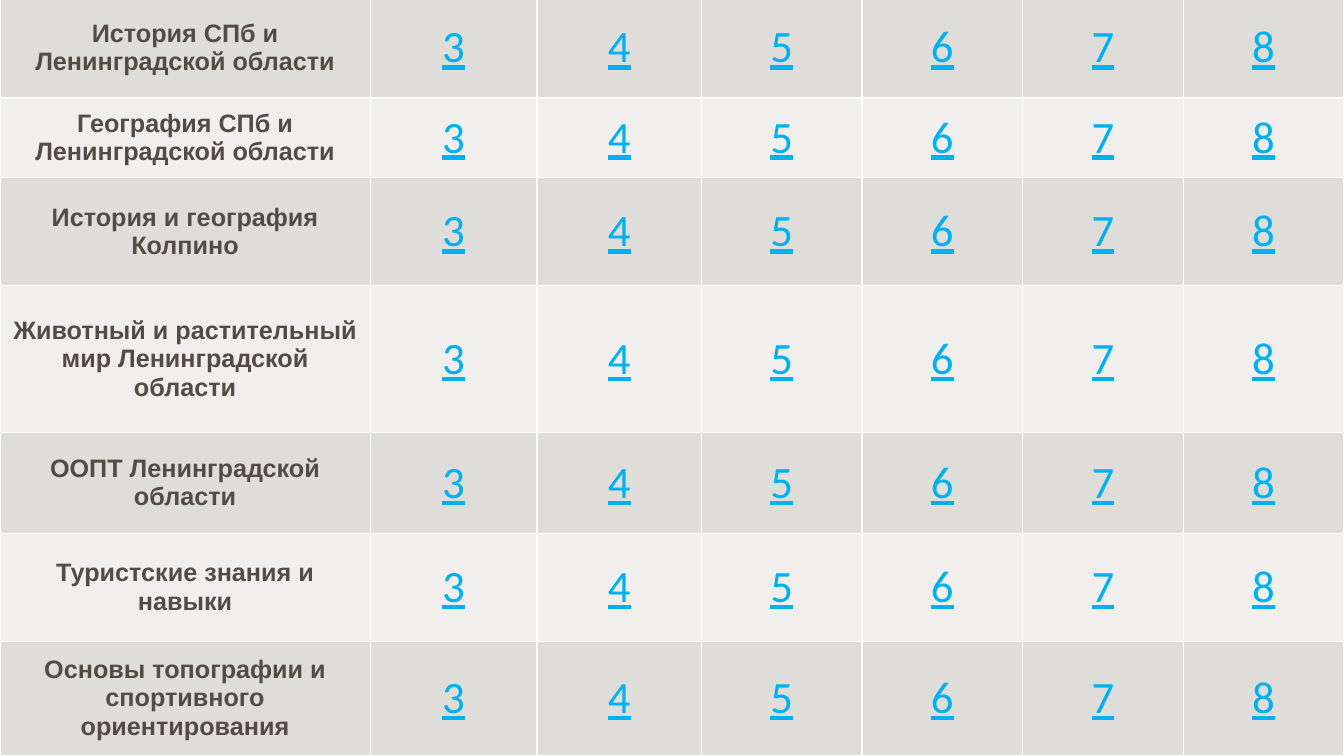
import dataclasses

import lxml.etree
import pptx
import pptx.dml.color
import pptx.enum.text
import pptx.oxml.ns
import pptx.table
import pptx.util


@dataclasses.dataclass(frozen=True)
class TextStyle:
    font: str
    size: float
    colour: str
    bold: bool
    underline: bool


@dataclasses.dataclass(frozen=True)
class Theme:
    background: str = "D7DACD"
    background_opacity: int = 56
    bands: tuple[str, str] = ("DFDDDA", "F0EFEE")
    border: str = "FFFFFF"
    border_width: float = 1
    topic: TextStyle = TextStyle("Arial", 18, "524C44", True, False)
    score: TextStyle = TextStyle("Calibri", 32, "00B0F0", False, True)


@dataclasses.dataclass(frozen=True)
class Category:
    topic: str
    height: float


THEME = Theme()
SLIDE_WIDTH, SLIDE_HEIGHT = 960, 540
BOARD_TOP = -2
COLUMN_WIDTHS = (264.4, 119.2, 117.4) + (114.75,) * 4
SCORES = range(3, 9)
CATEGORIES = (
    Category("История СПб и Ленинградской области", 72),
    Category("География СПб и Ленинградской области", 57),
    Category("История и география Колпино", 77),
    Category("Животный и растительный мир Ленинградской области", 105),
    Category("ООПТ Ленинградской области", 72),
    Category("Туристские знания и навыки", 77),
    Category("Основы топографии и спортивного ориентирования", 81.5),
)


def rgb(colour: str) -> pptx.dml.color.RGBColor:
    return pptx.dml.color.RGBColor.from_string(colour)


def add_element(
    parent: lxml.etree._Element, tag: str, **attributes: str
) -> lxml.etree._Element:
    return lxml.etree.SubElement(parent, pptx.oxml.ns.qn(tag), attributes)


def draw_borders(cell: pptx.table._Cell) -> None:
    properties = cell._tc.get_or_add_tcPr()
    width = str(pptx.util.Pt(THEME.border_width))
    for position, side in enumerate(("a:lnL", "a:lnR", "a:lnT", "a:lnB")):
        line = add_element(properties, side, w=width)
        add_element(add_element(line, "a:solidFill"), "a:srgbClr", val=THEME.border)
        properties.insert(position, line)


def fill_cell(
    cell: pptx.table._Cell, text: str, style: TextStyle, band: str
) -> None:
    cell.fill.solid()
    cell.fill.fore_color.rgb = rgb(band)
    draw_borders(cell)
    cell.vertical_anchor = pptx.enum.text.MSO_ANCHOR.MIDDLE
    paragraph = cell.text_frame.paragraphs[0]
    paragraph.alignment = pptx.enum.text.PP_ALIGN.CENTER
    run = paragraph.add_run()
    run.text = text
    run.font.name = style.font
    run.font.size = pptx.util.Pt(style.size)
    run.font.bold = style.bold
    run.font.underline = style.underline
    run.font.color.rgb = rgb(style.colour)


def main() -> None:
    presentation = pptx.Presentation()
    presentation.slide_width = pptx.util.Pt(SLIDE_WIDTH)
    presentation.slide_height = pptx.util.Pt(SLIDE_HEIGHT)
    slide = presentation.slides.add_slide(presentation.slide_layouts[6])

    backdrop = slide.background.fill
    backdrop.solid()
    backdrop.fore_color.rgb = rgb(THEME.background)
    for tint in slide.background._cSld.iter(pptx.oxml.ns.qn("a:srgbClr")):
        add_element(tint, "a:alpha", val=str(THEME.background_opacity * 1000))

    board = slide.shapes.add_table(
        len(CATEGORIES),
        len(COLUMN_WIDTHS),
        pptx.util.Pt(0),
        pptx.util.Pt(BOARD_TOP),
        pptx.util.Pt(SLIDE_WIDTH),
        pptx.util.Pt(sum(category.height for category in CATEGORIES)),
    ).table
    board.first_row = False
    board.horz_banding = False
    for column, width in zip(board.columns, COLUMN_WIDTHS):
        column.width = pptx.util.Pt(width)

    for index, category in enumerate(CATEGORIES):
        board.rows[index].height = pptx.util.Pt(category.height)
        band = THEME.bands[index % 2]
        fill_cell(board.cell(index, 0), category.topic, THEME.topic, band)
        for column, score in enumerate(SCORES, start=1):
            fill_cell(board.cell(index, column), str(score), THEME.score, band)

    presentation.save("out.pptx")


if __name__ == "__main__":
    main()
